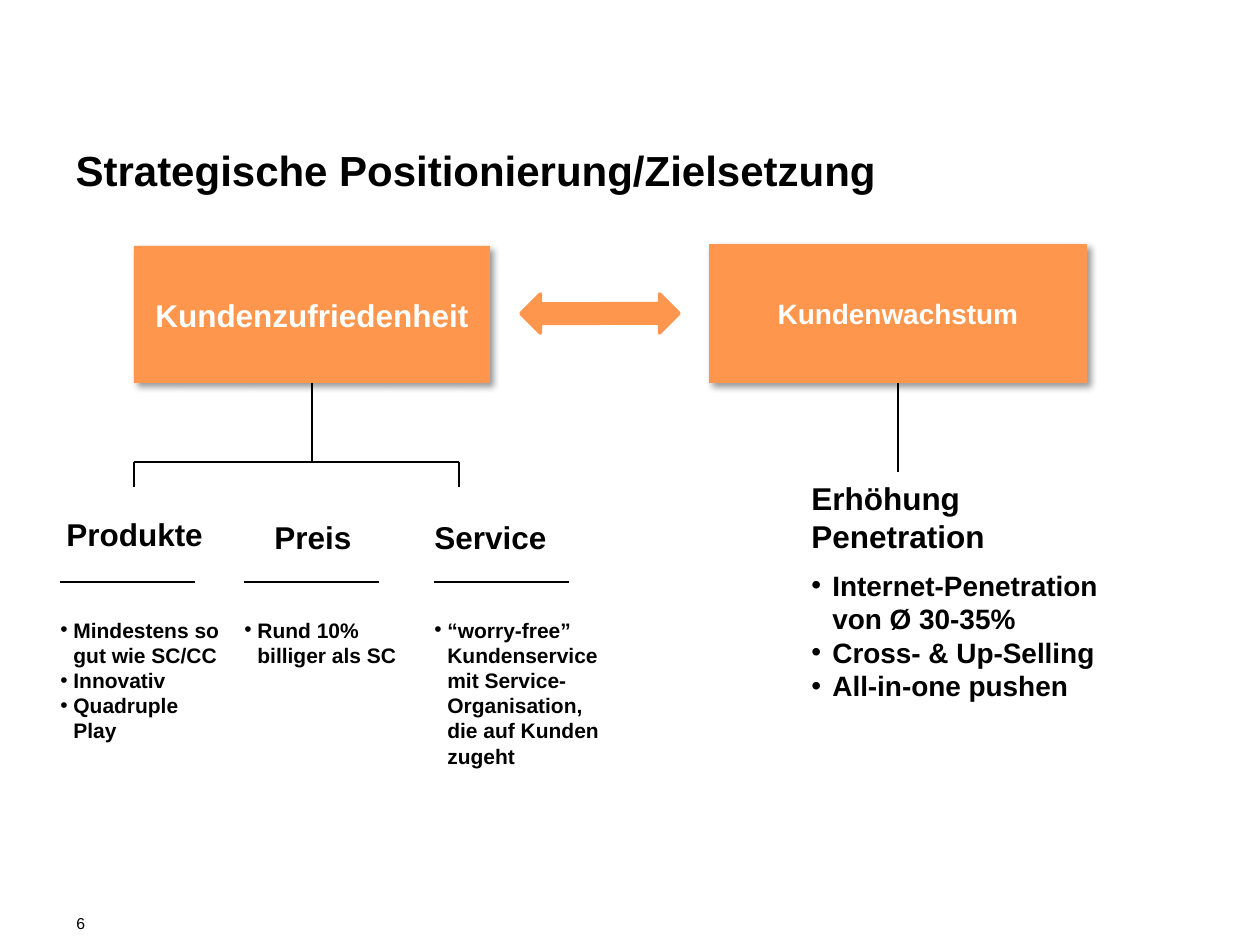
from dataclasses import dataclass

from lxml import etree
from pptx import Presentation
from pptx import util as u
from pptx.dml.color import RGBColor
from pptx.enum import shapes, text
from pptx.oxml.ns import qn

PX = 914400 / 126


def emu(px):
    return u.Emu(round(px * PX))


@dataclass(frozen=True)
class Theme:
    font: str = "Arial"
    ink: RGBColor = RGBColor(0, 0, 0)
    paper: RGBColor = RGBColor(255, 255, 255)
    accent: RGBColor = RGBColor(0xFF, 0x96, 0x4D)
    title: int = 24
    heading: int = 18
    goal: int = 16
    detail: int = 12
    footer: int = 9
    line: float = 0.75
    arrow_line: float = 2
    leading: float = 1.2


class Deck:
    def __init__(self, theme):
        self.theme = theme
        self.prs = Presentation()
        self.prs.slide_width, self.prs.slide_height = u.Inches(10), u.Inches(7.5)
        self.s = self.prs.slides.add_slide(self.prs.slide_layouts[1])

    def place(self, sp, x, y, w, h):
        sp.left, sp.top, sp.width, sp.height = map(emu, (x, y, w, h))

    def fill_paragraph(self, p, words, size, color=None, bold=True,
                       align=text.PP_ALIGN.LEFT):
        """Fill a paragraph; a newline in the words becomes a line break."""
        p.alignment = align
        p.space_before = u.Pt(0)
        p.line_spacing = u.Pt(round(size * self.theme.leading, 1))
        for i, part in enumerate(words.split("\n")):
            if i:
                p.add_line_break()
            r = p.add_run()
            r.text = part
            r.font.name, r.font.size, r.font.bold = self.theme.font, u.Pt(size), bold
            r.font.color.rgb = color or self.theme.ink

    def bullet(self, p, char, indent):
        """Give a paragraph a hanging bullet, or none when char is empty."""
        pPr = p._p.get_or_add_pPr()
        pPr.set("marL", str(emu(indent)))
        pPr.set("indent", str(-emu(indent)))
        if char:
            etree.SubElement(pPr, qn("a:buFont"), typeface=self.theme.font)
            etree.SubElement(pPr, qn("a:buChar"), char=char)
        else:
            etree.SubElement(pPr, qn("a:buNone"))

    def title(self, words, *box):
        sp = self.s.shapes.title
        self.place(sp, *box)
        tf = sp.text_frame
        tf.auto_size = text.MSO_AUTO_SIZE.NONE
        tf.vertical_anchor = text.MSO_ANCHOR.MIDDLE
        self.fill_paragraph(tf.paragraphs[0], words, self.theme.title)

    def textbox(self, x, y, w, h, grow=True):
        tf = self.s.shapes.add_textbox(*map(emu, (x, y, w, h))).text_frame
        tf.word_wrap = True
        if grow:
            tf.auto_size = text.MSO_AUTO_SIZE.SHAPE_TO_FIT_TEXT
        return tf

    def label(self, words, size, *box, bold=True, grow=True):
        tf = self.textbox(*box, grow=grow)
        self.fill_paragraph(tf.paragraphs[0], words, size, bold=bold)

    def bullets(self, items, size, indent, *box):
        tf = self.textbox(*box)
        for i, item in enumerate(items):
            p = tf.add_paragraph() if i else tf.paragraphs[0]
            self.bullet(p, "•", indent)
            self.fill_paragraph(p, item, size)

    def panel(self, words, size, *box, sp=None):
        """Orange box with a soft shadow; reuses sp when one is given."""
        sp = sp or self.s.shapes.add_shape(shapes.MSO_SHAPE.RECTANGLE, 0, 0, 0, 0)
        self.place(sp, *box)
        sp.fill.solid()
        sp.fill.fore_color.rgb = self.theme.accent
        sp.line.fill.background()
        self.drop_shadow(sp)
        tf = sp.text_frame
        tf.word_wrap = True
        tf.auto_size = text.MSO_AUTO_SIZE.NONE
        tf.vertical_anchor = text.MSO_ANCHOR.MIDDLE
        p = tf.paragraphs[0]
        self.bullet(p, "", 0)
        self.fill_paragraph(p, words, size, self.theme.paper, align=text.PP_ALIGN.CENTER)
        return sp

    def drop_shadow(self, sp):
        sp.shadow.inherit = False
        effects = sp._element.spPr.find(qn("a:effectLst"))
        shadow = etree.SubElement(
            effects, qn("a:outerShdw"), blurRad=str(u.Pt(4)), dist=str(u.Pt(3)),
            dir=str(45 * 60000), algn="tl", rotWithShape="0")
        color = etree.SubElement(shadow, qn("a:srgbClr"), val=str(self.theme.ink))
        etree.SubElement(color, qn("a:alpha"), val="40000")

    def line(self, x1, y1, x2, y2, below=None):
        """Straight line, starting at the bottom of a shape if one is given."""
        c = self.s.shapes.add_connector(
            shapes.MSO_CONNECTOR.STRAIGHT, *map(emu, (x1, y1, x2, y2)))
        if below is not None:
            c.begin_connect(below, 2)
        c.line.color.rgb = self.theme.ink
        c.line.width = u.Pt(self.theme.line)
        etree.SubElement(c._element.spPr, qn("a:effectLst"))

    def arrow(self, *box, rotation=0):
        sp = self.s.shapes.add_shape(shapes.MSO_SHAPE.RIGHT_ARROW, *map(emu, box))
        sp.rotation = rotation
        sp.shadow.inherit = False
        sp.fill.solid()
        sp.fill.fore_color.rgb = sp.line.color.rgb = self.theme.accent
        sp.line.width = u.Pt(self.theme.arrow_line)
        etree.SubElement(sp._element.spPr.find(qn("a:ln")), qn("a:round"))


# heading, heading left, top and width, list left and width, list items
PILLARS = [
    ("Produkte", 54, 509, 214, 48, 184,
     ["Mindestens so gut wie SC/CC", "Innovativ", "Quadruple\nPlay"]),
    ("Preis", 262, 512, 159, 232, 184, ["Rund 10% billiger als SC"]),
    ("Service", 422, 512, 159, 422, 202,
     ["“worry-free” Kundenservice mit Service-Organisation, die auf Kunden zugeht"]),
]
GROWTH = ["Internet-Penetration\nvon Ø 30-35%", "Cross- & Up-Selling", "All-in-one pushen"]


def main():
    theme = Theme()
    deck = Deck(theme)
    deck.title("Strategische Positionierung/Zielsetzung", 63, 125, 1134, 89)

    satisfaction = deck.panel("Kundenzufriedenheit", theme.heading, 134, 246, 356, 137)
    growth = deck.panel("Kundenwachstum", theme.goal, 709, 244, 378, 139,
                        sp=deck.s.placeholders[1])
    deck.arrow(600, 294, 79, 39)
    deck.arrow(521, 294, 79, 39, rotation=180)

    left, right, branch = 134, 459, 462
    deck.line(312, 383, 312, branch, below=satisfaction)
    deck.line(left, branch, right, branch)
    for x in (left, right):
        deck.line(x, branch, x, branch + 25)
    deck.line(898, 383, 898, 472, below=growth)

    for name, x, y, w, list_x, list_w, items in PILLARS:
        deck.label(name, theme.heading, x, y, w, 50)
        deck.line(list_x + 12, 582, list_x + 147, 582)
        deck.bullets(items, theme.detail, 13, list_x, 611, list_w, 165)

    deck.label("Erhöhung Penetration", theme.heading, 799, 473, 248, 89)
    deck.bullets(GROWTH, theme.goal, 21, 799, 562, 357, 147)
    deck.label("6", theme.footer, 64, 908, 294, 37, bold=False, grow=False)
    deck.prs.save("out.pptx")


if __name__ == "__main__":
    main()
